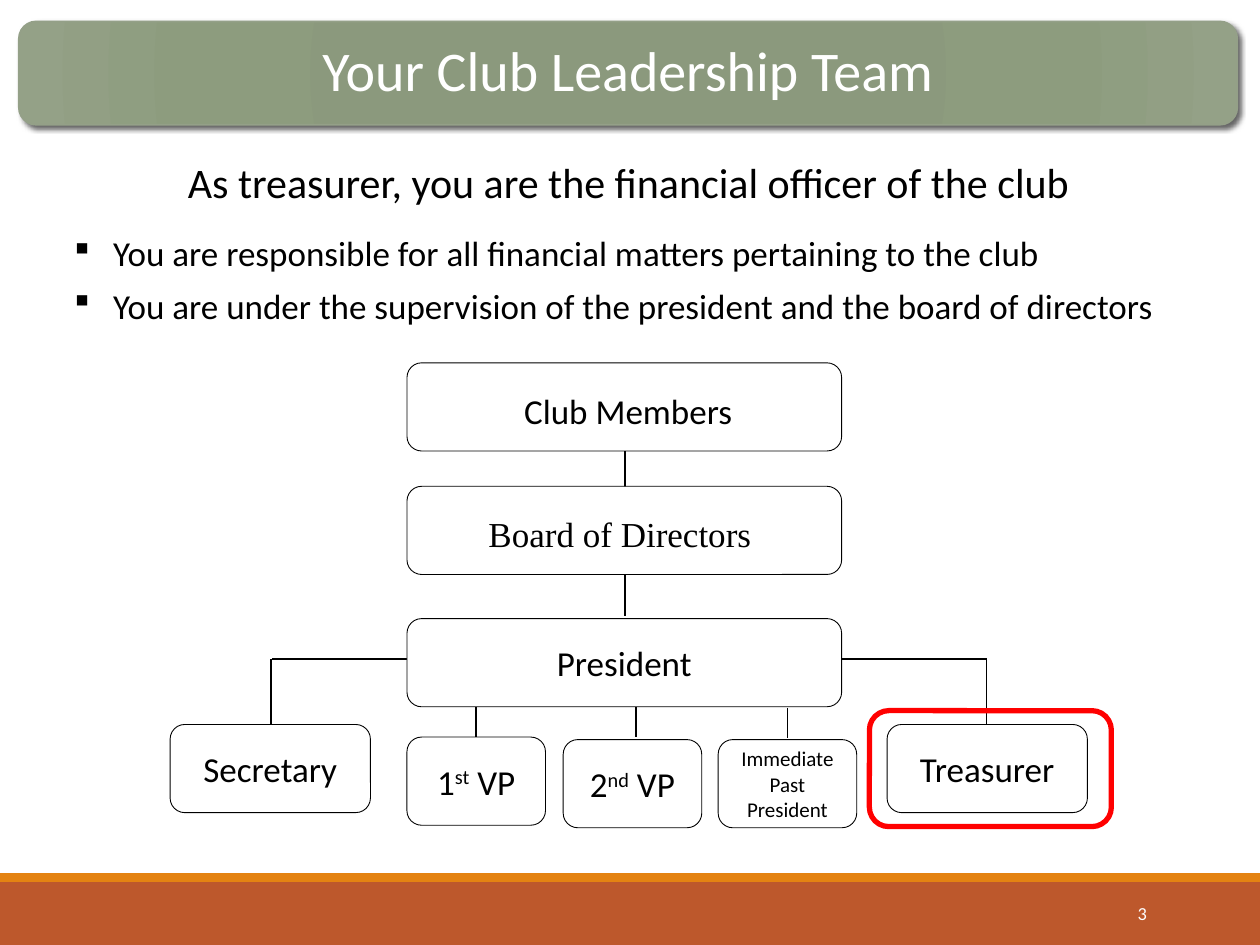
from lxml.etree import SubElement
from pptx import Presentation
from pptx.dml.color import RGBColor
from pptx.enum.shapes import MSO_CONNECTOR, MSO_SHAPE
from pptx.enum.text import MSO_ANCHOR, PP_ALIGN
from pptx.oxml import parse_xml
from pptx.oxml.ns import nsdecls, qn
from pptx.util import Inches, Pt

BLACK = RGBColor(0x00, 0x00, 0x00)
WHITE = RGBColor(0xFF, 0xFF, 0xFF)
RED = RGBColor(0xFF, 0x00, 0x00)
RUST = RGBColor(0xBD, 0x58, 0x2C)
ORANGE = RGBColor(0xE4, 0x83, 0x12)
SAGE = RGBColor(0x94, 0xA0, 0x88)

deck = Presentation()
deck.slide_width = Inches(10)
deck.slide_height = Inches(7.5)
page = deck.slides.add_slide(deck.slide_layouts[6])


def add_panel(kind, left, top, width, height, fill=None, line=None, weight=0.5):
    panel = page.shapes.add_shape(
        kind, Inches(left), Inches(top), Inches(width), Inches(height))
    panel.shadow.inherit = False
    if fill is None:
        panel.fill.background()
    else:
        panel.fill.solid()
        panel.fill.fore_color.rgb = fill
    if line is None:
        panel.line.fill.background()
    else:
        panel.line.color.rgb = line
        panel.line.width = Pt(weight)
    return panel


def add_span(para, text, size, color=BLACK, font="Calibri"):
    span = para.add_run()
    span.text = text
    span.font.size = Pt(size)
    span.font.name = font
    span.font.color.rgb = color
    return span


add_panel(MSO_SHAPE.RECTANGLE, 0, 7, 10, 0.5, RUST)
add_panel(MSO_SHAPE.RECTANGLE, 0, 6.93, 10, 0.07, ORANGE)

banner = add_panel(MSO_SHAPE.ROUNDED_RECTANGLE, 0.15, 0.17, 9.67, 0.82, None, SAGE, 1)
stops = [(0, "8A987B"), (34, "8B997D"), (70, "8D9C7E"), (100, "94A187")]
stop_xml = "".join(
    f'<a:gs pos="{place * 1000}"><a:srgbClr val="{color}"/></a:gs>'
    for place, color in stops)
gradient = parse_xml(
    f'<a:gradFill {nsdecls("a")}><a:gsLst>{stop_xml}</a:gsLst><a:path path="circle">'
    '<a:fillToRect l="100000" t="100000" r="100000" b="100000"/></a:path></a:gradFill>')
banner_properties = banner.element.spPr
banner_properties.replace(banner_properties.find(qn("a:noFill")), gradient)
shadow = parse_xml(
    f'<a:outerShdw {nsdecls("a")} blurRad="{Pt(3)}" dist="{Pt(2)}" dir="2700000" '
    'algn="tl" rotWithShape="0"><a:srgbClr val="000000"><a:alpha val="60000"/>'
    '</a:srgbClr></a:outerShdw>')
banner_properties.find(qn("a:effectLst")).append(shadow)

captions = [
    ("Your Club Leadership Team", 0.19, 0.21, 9.59, 0.74, PP_ALIGN.CENTER, 32),
    ("3", 8.12, 7.06, 1.08, 0.4, PP_ALIGN.RIGHT, 10.5),
]
for text, left, top, width, height, align, size in captions:
    box = page.shapes.add_textbox(Inches(left), Inches(top), Inches(width), Inches(height))
    box.text_frame.word_wrap = True
    box.text_frame.vertical_anchor = MSO_ANCHOR.MIDDLE
    para = box.text_frame.paragraphs[0]
    para.alignment = align
    para.line_spacing = 0.9
    add_span(para, text, size, WHITE)

connections = [
    (4.96, 3.58, 4.96, 3.92),
    (4.96, 4.55, 4.96, 4.89),
    (3.23, 5.23, 2.16, 5.23),
    (2.15, 5.23, 2.15, 5.75),
    (3.78, 5.61, 3.78, 5.85),
    (5.05, 5.61, 5.05, 5.85),
    (6.25, 5.62, 6.25, 5.86),
    (7.83, 5.23, 6.68, 5.23),
    (7.83, 5.23, 7.83, 5.75),
]
for ends in connections:
    link = page.shapes.add_connector(MSO_CONNECTOR.STRAIGHT, *map(Inches, ends))
    link.line.color.rgb = BLACK
    link.line.width = Pt(1)
    SubElement(link.element.spPr, qn("a:effectLst"))

roles = [
    (3.23, 2.88, 3.45, [" Club Members"], 20, "Calibri", True),
    (3.23, 3.86, 3.45, ["Board of Directors "], 20, "Times New Roman", True),
    (3.23, 4.91, 3.45, ["President"], 20, "Calibri", False),
    (1.35, 5.75, 1.59, ["Secretary"], 20, "Calibri", False),
    (7.04, 5.75, 1.59, ["Treasurer"], 20, "Calibri", False),
    (3.23, 5.85, 1.1, ["1", "st", " VP"], 20, "Calibri", False),
    (4.47, 5.87, 1.1, ["2", "nd", " VP"], 20, "Calibri", False),
    (5.7, 5.87, 1.1, ["Immediate Past President"], 12, "Calibri", False),
]
for left, top, width, texts, size, font, spaced in roles:
    role = add_panel(MSO_SHAPE.ROUNDED_RECTANGLE, left, top, width, 0.7, WHITE, BLACK)
    role.text_frame.word_wrap = True
    role.text_frame.vertical_anchor = MSO_ANCHOR.MIDDLE
    para = role.text_frame.paragraphs[0]
    para.alignment = PP_ALIGN.CENTER
    if spaced:
        para.line_spacing = 1.15
        para.space_after = Pt(10)
    for text in texts:
        span = add_span(para, text, size, BLACK, font)
        if text in ("st", "nd"):
            span.font._element.set("baseline", "30000")

box = page.shapes.add_textbox(Inches(0.49), Inches(1.19), Inches(9), Inches(1.46))
box.text_frame.word_wrap = True
para = box.text_frame.paragraphs[0]
para.alignment = PP_ALIGN.CENTER
para.space_after = Pt(14.5)
add_span(para, "As treasurer, you are the financial officer of the club", 24)

duties = [
    "You are responsible for all financial matters pertaining to the club",
    "You are under the supervision of the president and the board of directors",
]
for duty in duties:
    para = box.text_frame.add_paragraph()
    para.space_after = Pt(6)
    add_span(para, duty, 20)
    properties = para._p.get_or_add_pPr()
    properties.set("marL", str(Inches(0.31)))
    properties.set("indent", str(-Inches(0.31)))
    SubElement(properties, qn("a:buFont"), typeface="Wingdings")
    SubElement(properties, qn("a:buChar"), char="§")

add_panel(MSO_SHAPE.ROUNDED_RECTANGLE, 6.9, 5.64, 1.92, 0.92, None, RED, 3)

deck.save("out.pptx")
